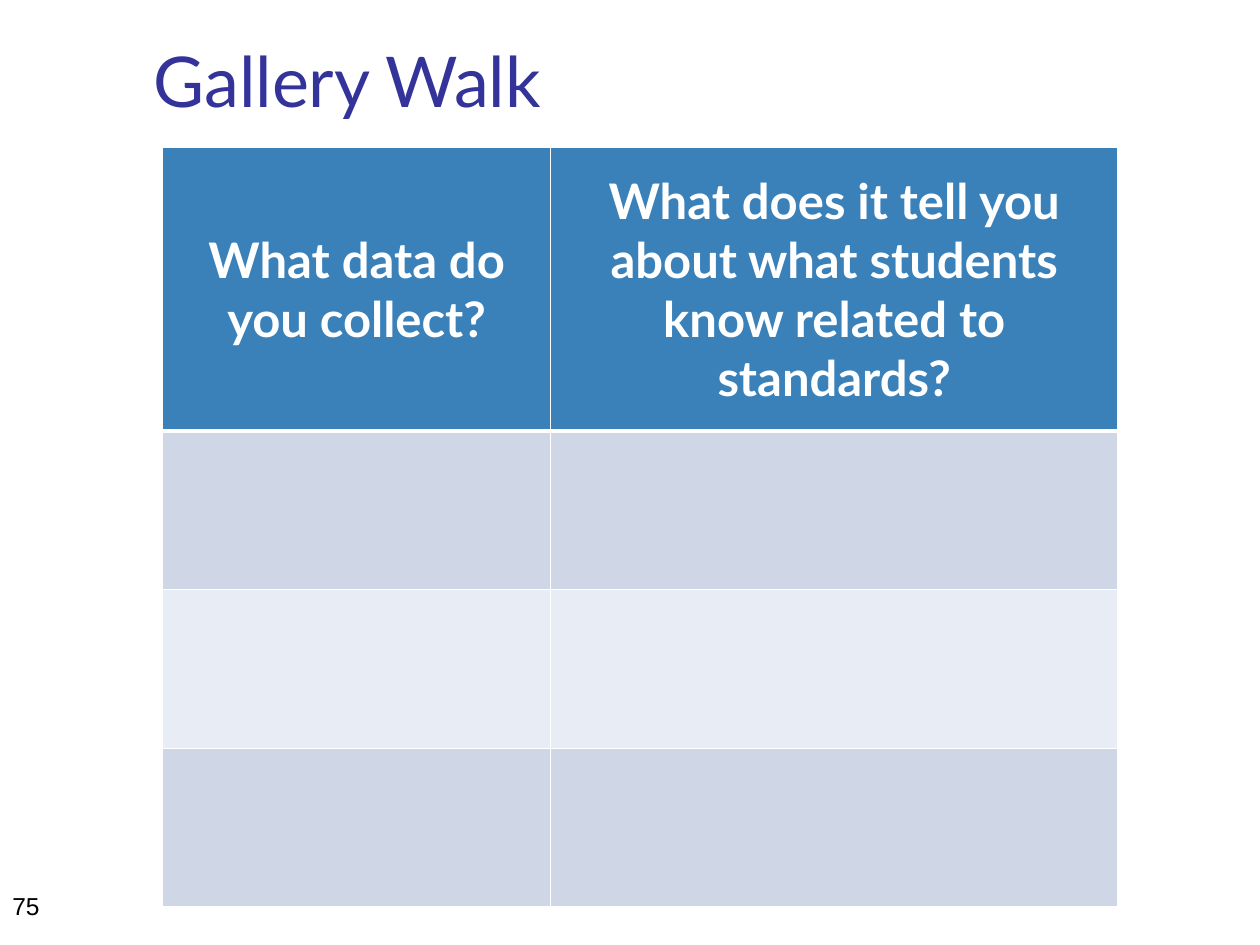
from lxml import etree
from pptx import Presentation
from pptx import util as u
from pptx.dml.color import RGBColor
from pptx.enum import text
from pptx.oxml import ns

INDIGO = RGBColor(0x33, 0x33, 0x99)
BLUE = RGBColor(0x3A, 0x81, 0xBA)
DARK_BAND = RGBColor(0xCF, 0xD7, 0xE7)
LIGHT_BAND = RGBColor(0xE8, 0xEC, 0xF4)
WHITE = RGBColor(0xFF, 0xFF, 0xFF)
BLACK = RGBColor(0, 0, 0)

HEADINGS = (
    "What data do you collect?",
    "What does it tell you about what students know related to standards?",
)
COLUMN_WIDTHS = (3.08, 4.5)
ROW_HEIGHTS = (2.25, 1.26, 1.26, 1.26)


def write(frame, words, size, color, font="Lato", bold=False,
          align=text.PP_ALIGN.LEFT):
    para = frame.paragraphs[0]
    para.alignment = align
    span = para.add_run()
    span.text = words
    span.font.name = font
    span.font.size = u.Pt(size)
    span.font.bold = bold
    span.font.color.rgb = color


class SlideBuilder:
    def __init__(self, page):
        self.page = page

    def text_box(self, words, left, top, width, height, **style):
        box = self.page.shapes.add_textbox(
            u.Inches(left), u.Inches(top), u.Inches(width), u.Inches(height))
        box.text_frame.word_wrap = True
        write(box.text_frame, words, **style)

    def border(self, cell, widths, color=WHITE):
        properties = cell._tc.get_or_add_tcPr()
        for index, (side, width) in enumerate(widths.items()):
            line = etree.Element(ns.qn(f"a:ln{side}"), w=str(u.Pt(width)))
            fill = etree.SubElement(line, ns.qn("a:solidFill"))
            etree.SubElement(fill, ns.qn("a:srgbClr"), val=str(color))
            properties.insert(index, line)

    def table(self, left, top, headings, widths, heights):
        frame = self.page.shapes.add_table(
            len(heights), len(widths), u.Inches(left), u.Inches(top),
            u.Inches(sum(widths)), u.Inches(sum(heights)))
        grid = frame.table
        for column, width in zip(grid.columns, widths):
            column.width = u.Inches(width)
        for index, (row, height) in enumerate(zip(grid.rows, heights)):
            row.height = u.Inches(height)
            band = DARK_BAND if index % 2 else LIGHT_BAND
            for cell in row.cells:
                cell.fill.solid()
                cell.fill.fore_color.rgb = band if index else BLUE
                self.border(cell, {"L": 1, "R": 1,
                                   "T": 3 if index == 1 else 1,
                                   "B": 1 if index else 3})
        for cell, heading in zip(grid.rows[0].cells, headings):
            cell.vertical_anchor = text.MSO_ANCHOR.MIDDLE
            write(cell.text_frame, heading, 28, WHITE, bold=True,
                  align=text.PP_ALIGN.CENTER)


def main():
    deck = Presentation()
    deck.slide_width = u.Inches(10)
    deck.slide_height = u.Inches(7.5)
    builder = SlideBuilder(deck.slides.add_slide(deck.slide_layouts[6]))
    builder.text_box("Gallery Walk", 1.12, 0.25, 7.67, 1.25,
                     size=40, color=INDIGO)
    builder.table(1.29, 1.17, HEADINGS, COLUMN_WIDTHS, ROW_HEIGHTS)
    builder.text_box("75", 0, 7.02, 2.33, 0.4,
                     size=14, color=BLACK, font="Arial")
    deck.save("out.pptx")


if __name__ == "__main__":
    main()
